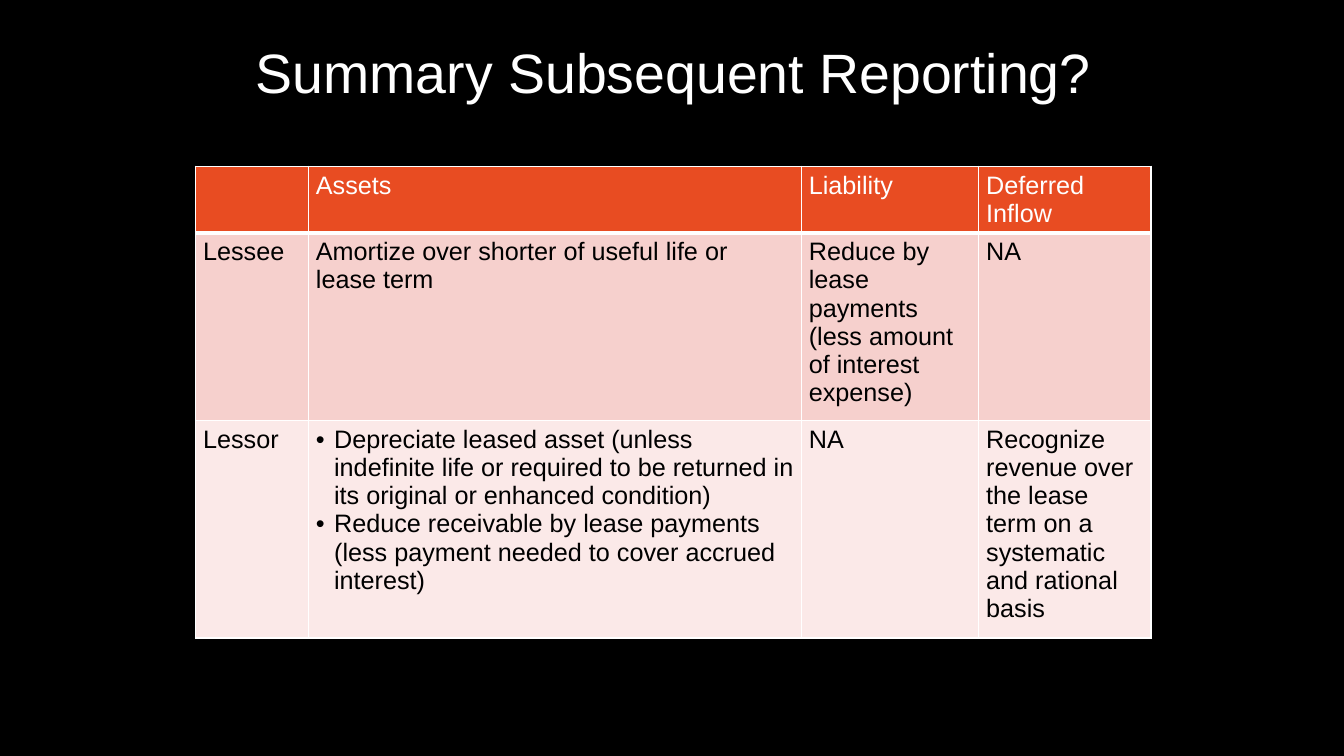
from dataclasses import dataclass

from lxml import etree
from pptx import Presentation
from pptx.dml.color import RGBColor
from pptx.enum import text as t
from pptx.oxml import ns
from pptx.util import Pt

BLACK = RGBColor(0, 0, 0)
WHITE = RGBColor(0xFF, 0xFF, 0xFF)
ORANGE = RGBColor(0xE8, 0x4C, 0x22)
ROSE = RGBColor(0xF6, 0xD0, 0xCD)
BLUSH = RGBColor(0xFB, 0xE9, 0xE8)
FONT = "Arial"
WIDTHS = (80.6, 352.1, 126.7, 123.1)
INSETS = {"margin_left": Pt(5.4), "margin_right": Pt(5.4),
          "margin_top": Pt(3.6), "margin_bottom": Pt(3.6)}


@dataclass
class Row:
    high: float
    fill: RGBColor
    ink: RGBColor
    base: float
    cells: tuple[str, ...]


ROWS = (
    Row(42.5, ORANGE, WHITE, 3, ("", "Assets", "Liability", "Deferred Inflow")),
    Row(133.9, ROSE, BLACK, 1, (
        "Lessee",
        "Amortize over shorter of useful life or lease term",
        "Reduce by lease payments (less amount of interest expense)",
        "NA")),
    Row(155.5, BLUSH, BLACK, 1, (
        "Lessor",
        "Depreciate leased asset (unless indefinite life or required to be "
        "returned in its original or enhanced condition)\n"
        "Reduce receivable by lease payments (less payment needed to cover "
        "accrued interest)",
        "NA",
        "Recognize revenue over the lease term on a systematic and rational "
        "basis")),
)


def assign(item, values: dict) -> None:
    for name, value in values.items():
        setattr(item, name, value)


def style(font, size: float, ink: RGBColor) -> None:
    assign(font, {"name": FONT, "size": Pt(size), "bold": False})
    font.color.rgb = ink


def bullet(para) -> None:
    props = para._p.get_or_add_pPr()
    props.set("marL", str(Pt(13)))
    props.set("indent", str(-Pt(13)))
    etree.SubElement(props, ns.qn("a:buFont"), typeface=FONT)
    etree.SubElement(props, ns.qn("a:buChar"), char="•")


def border(cell, base: float) -> None:
    props = cell._tc.get_or_add_tcPr()
    for side, width in {"L": 1, "R": 1, "T": 1, "B": base}.items():
        line = etree.SubElement(props, ns.qn(f"a:ln{side}"), w=str(Pt(width)))
        fill = etree.SubElement(line, ns.qn("a:solidFill"))
        etree.SubElement(fill, ns.qn("a:srgbClr"), val=str(WHITE))


def draw(cell, words: str, row: Row) -> None:
    assign(cell, INSETS)
    border(cell, row.base)
    cell.fill.solid()
    cell.fill.fore_color.rgb = row.fill
    cell.text = words
    paras = cell.text_frame.paragraphs
    for para in paras:
        if len(paras) > 1:
            bullet(para)
        for run in para.runs:
            style(run.font, 18, row.ink)


def head(title) -> None:
    assign(title, {"left": Pt(157), "top": Pt(23.8),
                   "width": Pt(648), "height": Pt(54.7)})
    frame = title.text_frame
    frame.text = "Summary Subsequent Reporting?"
    assign(frame, {"word_wrap": True, "auto_size": t.MSO_AUTO_SIZE.NONE,
                   "vertical_anchor": t.MSO_ANCHOR.MIDDLE})
    para = frame.paragraphs[0]
    para.alignment = t.PP_ALIGN.CENTER
    style(para.runs[0].font, 39.6, WHITE)


def grid(slide) -> None:
    table = slide.shapes.add_table(
        len(ROWS), len(WIDTHS), Pt(139.7), Pt(118.8), Pt(sum(WIDTHS)),
        Pt(sum(row.high for row in ROWS))).table
    table.horz_banding = False
    for column, width in zip(table.columns, WIDTHS):
        column.width = Pt(width)
    for line, row in zip(table.rows, ROWS):
        line.height = Pt(row.high)
        for cell, words in zip(line.cells, row.cells):
            draw(cell, words, row)


def main() -> None:
    deck = Presentation()
    assign(deck, {"slide_width": Pt(960), "slide_height": Pt(540)})
    slide = deck.slides.add_slide(deck.slide_layouts[5])
    slide.background.fill.solid()
    slide.background.fill.fore_color.rgb = BLACK
    head(slide.shapes.title)
    grid(slide)
    deck.save("out.pptx")


if __name__ == "__main__":
    main()
